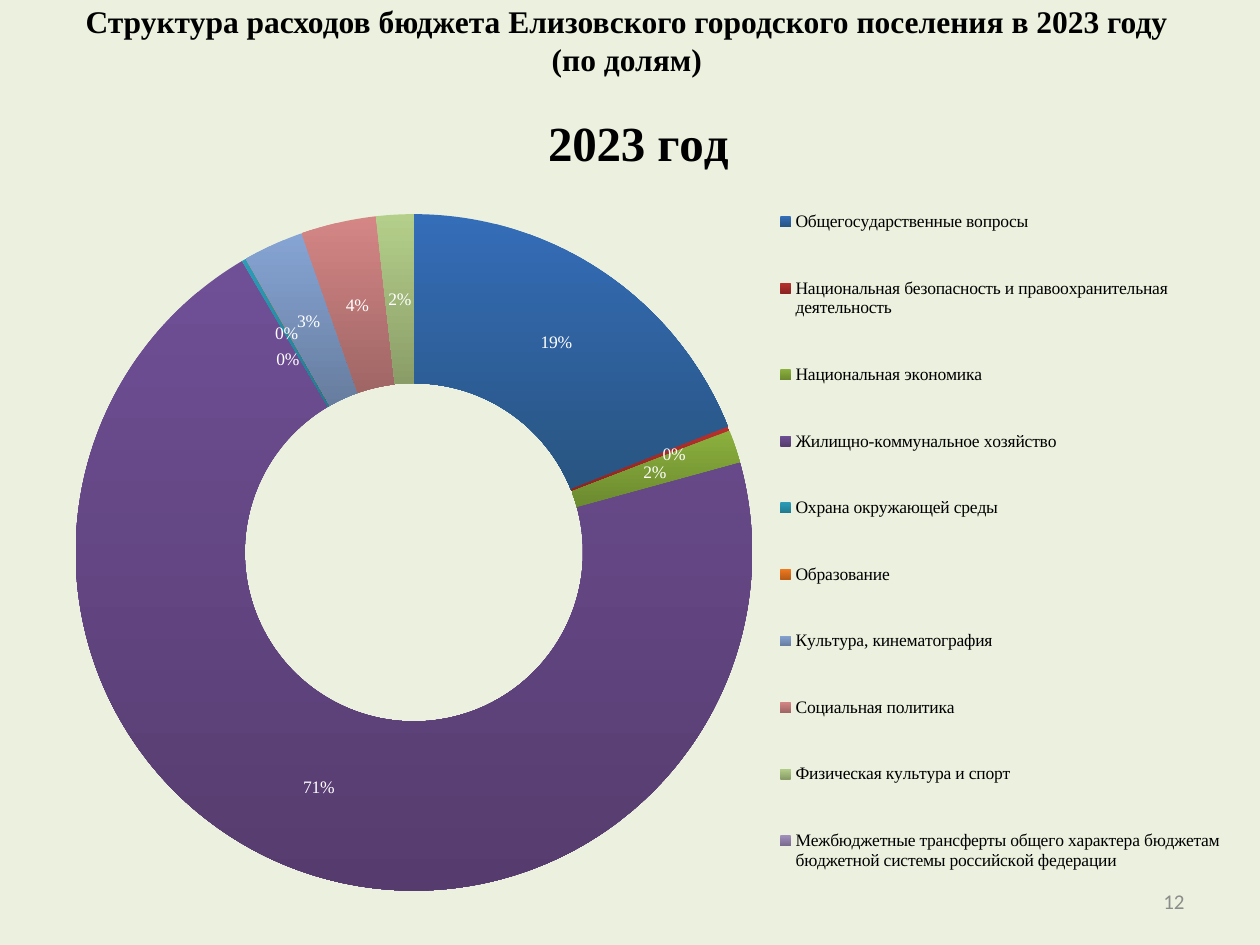
from dataclasses import dataclass

from pptx import Presentation
from pptx.chart.data import CategoryChartData
from pptx.dml.color import RGBColor
from pptx.enum.chart import XL_CHART_TYPE, XL_LEGEND_POSITION
from pptx.enum.text import MSO_ANCHOR, PP_ALIGN
from pptx.oxml import parse_xml
from pptx.oxml.ns import nsdecls, qn
from pptx.util import Inches, Pt

DOUGHNUT = XL_CHART_TYPE.DOUGHNUT
RIGHT_LEGEND = XL_LEGEND_POSITION.RIGHT
MIDDLE = MSO_ANCHOR.MIDDLE
CENTER, RIGHT = PP_ALIGN.CENTER, PP_ALIGN.RIGHT


@dataclass(frozen=True)
class Theme:
    background: str = "EBF1DE"
    text: str = "000000"
    label: str = "FFFFFF"
    muted: str = "8C8C8C"
    serif: str = "Times New Roman"
    sans: str = "Calibri"
    heading: int = 18
    chart_title: int = 28
    chart_text: int = 10
    page_number: int = 12
    slices: tuple = (
        ("346DB8", "285480"), ("B8302D", "8A2422"), ("8BB03D", "6C8A2F"),
        ("6F4F96", "563C6E"), ("2B9DB8", "217A8F"), ("F07A1E", "B85C18"),
        ("86A4D4", "677D9F"), ("D48685", "9F6665"), ("B4CF8A", "8A9D68"),
        ("A18FBC", "7A6C8F"),
    )


EXPENSES = {
    "Общегосударственные вопросы": 19,
    "Национальная безопасность и правоохранительная деятельность": 0.2,
    "Национальная экономика": 1.6,
    "Жилищно-коммунальное хозяйство": 71,
    "Охрана окружающей среды": 0.2,
    "Образование": 0.01,
    "Культура, кинематография": 2.9,
    "Социальная политика": 3.6,
    "Физическая культура и спорт": 1.8,
    "Межбюджетные трансферты общего характера бюджетам "
    "бюджетной системы российской федерации": 0,
}
CHART_BOX = (0.47, 0.62, 9.3, 6.67)
TITLE_AT = (3.81, 0.2)
RING_BOX = (0.13, 1.08, 5.37, 5.37)
LEGEND_BOX = (5.65, 0.69, 3.63, 5.97)
LABEL_SHIFTS = {1: (0.19, -0.04), 5: (0, 0.22)}


def manual_layout(box, target="", edge=True):
    parts = [f'<c:layoutTarget val="{target}"/>'] if target else []
    if edge:
        parts += ['<c:xMode val="edge"/>', '<c:yMode val="edge"/>']
    extents = CHART_BOX[2:] * 2
    parts += [f'<c:{k} val="{v / extent:.4f}"/>' for k, v, extent in zip("xywh", box, extents)]
    return f'<c:layout {nsdecls("c")}><c:manualLayout>{"".join(parts)}</c:manualLayout></c:layout>'


def place(parent, before, layout):
    for old in parent.findall(qn("c:layout")):
        parent.remove(old)
    parent.find(qn(before)).addprevious(parse_xml(layout))


class SlideBuilder:
    def __init__(self, prs, theme):
        self.theme = theme
        self.s = prs.slides.add_slide(prs.slide_layouts[6])
        fill = self.s.background.fill
        fill.solid()
        fill.fore_color.rgb = RGBColor.from_string(theme.background)

    def style(self, font, size, color, name, bold=False):
        font.size, font.name, font.bold = Pt(size), name, bold
        font.color.rgb = RGBColor.from_string(color)

    def text(self, box, lines, align, *look):
        tf = self.s.shapes.add_textbox(*map(Inches, box)).text_frame
        tf.word_wrap = True
        tf.vertical_anchor = MIDDLE
        p = tf.paragraphs[0]
        p.alignment = align
        for i, line in enumerate(lines):
            if i:
                p.add_line_break()
            r = p.add_run()
            r.text = line
            self.style(r.font, *look)

    def doughnut(self, box, title, values):
        t = self.theme
        data = CategoryChartData()
        data.categories = list(values)
        data.add_series(title, list(values.values()))
        chart = self.s.shapes.add_chart(DOUGHNUT, *map(Inches, box), data).chart
        self.style(chart.font, t.chart_text, t.text, t.serif)
        self.chart_title(chart, title)
        self.legend(chart)
        plot = chart.plots[0]
        plot.vary_by_categories = True
        plot._element.find(qn("c:holeSize")).set("val", "50")
        place(plot._element.getparent(), "c:doughnutChart", manual_layout(RING_BOX, "inner"))
        series = plot.series[0]
        for i, stops in enumerate(t.slices):
            fill = series.points[i].format.fill
            fill.gradient()
            fill.gradient_angle = 270
            for stop, color in zip(fill.gradient_stops, stops):
                stop.color.rgb = RGBColor.from_string(color)
        self.percent_labels(series)

    def chart_title(self, chart, title):
        t = self.theme
        chart.has_title = True
        r = chart.chart_title.text_frame.paragraphs[0].add_run()
        r.text = title
        self.style(r.font, t.chart_title, t.text, t.serif, True)
        chart.chart_title.include_in_layout = False
        place(chart.chart_title._element, "c:overlay", manual_layout(TITLE_AT))

    def legend(self, chart):
        chart.has_legend = True
        legend = chart.legend
        legend.position = RIGHT_LEGEND
        legend.include_in_layout = False
        place(legend._element, "c:overlay", manual_layout(LEGEND_BOX))

    def percent_labels(self, series):
        t = self.theme
        labels = series.data_labels
        self.style(labels.font, t.chart_text, t.label, t.serif)
        labels.show_percentage = True
        labels.show_value = False
        labels.number_format = "0%"
        labels.number_format_is_linked = False
        flags = {"LegendKey": 0, "Val": 0, "CatName": 0, "SerName": 0, "Percent": 1, "BubbleSize": 0}
        shows = "".join(f'<c:show{k} val="{v}"/>' for k, v in flags.items())
        for i, (point, shift) in enumerate(LABEL_SHIFTS.items()):
            layout = manual_layout(shift, edge=False)
            labels._element.insert(i, parse_xml(
                f'<c:dLbl {nsdecls("c")}><c:idx val="{point}"/>{layout}{shows}</c:dLbl>'))


def main():
    prs = Presentation()
    prs.slide_width, prs.slide_height = Inches(10), Inches(7.5)
    theme = Theme()
    slide = SlideBuilder(prs, theme)
    slide.text((0.31, 0.16, 9.33, 0.31),
               ["Структура расходов бюджета Елизовского городского поселения в 2023 году",
                " (по долям) "],
               CENTER, theme.heading, theme.text, theme.serif, True)
    slide.doughnut(CHART_BOX, "2023 год ", EXPENSES)
    slide.text((7.17, 6.95, 2.33, 0.4), ["12"], RIGHT,
               theme.page_number, theme.muted, theme.sans)
    prs.save("out.pptx")


if __name__ == "__main__":
    main()
